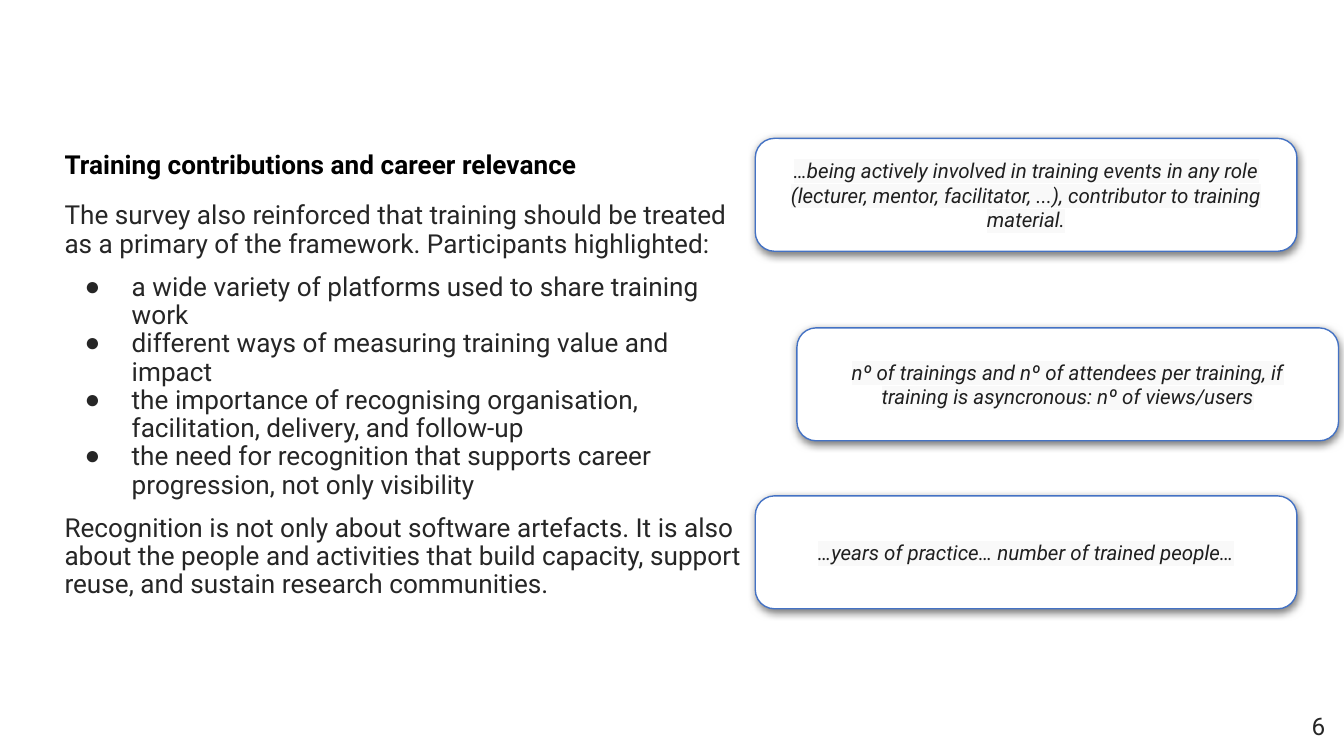
"""Build the slide on training contributions and career relevance."""
from lxml import etree
from pptx import Presentation
from pptx import util as u
from pptx.dml.color import RGBColor
from pptx.enum import shapes, text
from pptx.oxml import parse_xml
from pptx.oxml.ns import nsdecls, qn

HEADING = "Training contributions and career relevance"
INTRO = ("The survey also reinforced that training should be treated as a primary "
         "of the framework. Participants highlighted:")
POINTS = [
    "a wide variety of platforms used to share training work",
    "different ways of measuring training value and impact",
    "the importance of recognising organisation, facilitation, delivery, and follow-up",
    "the need for recognition that supports career progression, not only visibility",
]
CLOSING = ("Recognition is not only about software artefacts. It is also about the people "
           "and activities that build capacity, support reuse, and sustain research communities.")
QUOTES = [
    (5.62, 1.03, "…being actively involved in training events in any role "
                 "(lecturer, mentor, facilitator, ...), contributor to training material."),
    (5.62, 3.69, "…years of practice… number of trained people…"),
    (5.93, 2.44, "nº of trainings and nº of attendees per training, "
                 "if training is asyncronous: nº of views/users"),
]
PAGE = "6"
SLIDE_WIDTH = 10
SLIDE_HEIGHT = SLIDE_WIDTH * 9 / 16
QUOTE_SIZE = (4.03, 0.84)

THEME = {
    "font": "Roboto", "heading": "000000", "body": "262626", "quote": "1F1F1F",
    "highlight": "F9F9F9", "card": "FFFFFF", "border": "4472C4", "shadow": "000000",
    "body_size": 14, "quote_size": 11, "page_size": 13,
}


def inches(*values):
    return [u.Inches(v) for v in values]


def format_frame(tf, side, edge, anchor):
    values = {"word_wrap": True, "auto_size": text.MSO_AUTO_SIZE.NONE,
              "vertical_anchor": anchor,
              "margin_left": u.Inches(side), "margin_right": u.Inches(side),
              "margin_top": u.Inches(edge), "margin_bottom": u.Inches(edge)}
    for name, value in values.items():
        setattr(tf, name, value)


def add_text(p, words, size, color, **style):
    r = p.add_run()
    r.text = words
    r.font.color.rgb = RGBColor.from_string(THEME[color])
    values = {"name": THEME["font"], "size": u.Pt(THEME[size]), **style}
    for name, value in values.items():
        setattr(r.font, name, value)
    return r


def set_bullet(p, bulleted):
    pPr = p._p.get_or_add_pPr()
    left, indent = inches(0.5, -0.35) if bulleted else (0, 0)
    pPr.set("marL", str(left))
    pPr.set("indent", str(indent))
    if bulleted:
        color = etree.SubElement(pPr, qn("a:buClr"))
        etree.SubElement(color, qn("a:srgbClr"), val=THEME["body"])
        etree.SubElement(pPr, qn("a:buChar"), char="●")
    else:
        etree.SubElement(pPr, qn("a:buNone"))


def add_body(s):
    sp = s.placeholders[1]
    sp.left, sp.top, sp.width, sp.height = inches(0.41, 1.03, 5.21, 3.85)
    tf = sp.text_frame
    format_frame(tf, 0.07, 0.04, text.MSO_ANCHOR.TOP)
    rows = [(HEADING, "heading", False, 1.15, 0), (INTRO, "body", False, 0.9, 12)]
    rows += [(point, "body", True, 0.9, 0 if i else 8) for i, point in enumerate(POINTS)]
    rows.append((CLOSING, "body", False, 0.9, 8))
    for i, (words, color, bulleted, spacing, before) in enumerate(rows):
        p = tf.add_paragraph() if i else tf.paragraphs[0]
        set_bullet(p, bulleted)
        values = {"line_spacing": spacing, "space_before": u.Pt(before),
                  "space_after": u.Pt(0), "alignment": text.PP_ALIGN.LEFT}
        for name, value in values.items():
            setattr(p, name, value)
        add_text(p, words, "body_size", color, bold=color == "heading")


def add_quote(s, left, top, words):
    sp = s.shapes.add_shape(shapes.MSO_SHAPE.ROUNDED_RECTANGLE,
                            *inches(left, top, *QUOTE_SIZE))
    sp.adjustments[0] = 0.17
    sp.fill.solid()
    sp.fill.fore_color.rgb = RGBColor.from_string(THEME["card"])
    sp.line.color.rgb = RGBColor.from_string(THEME["border"])
    sp.line.width = u.Pt(0.75)
    sp._element.spPr.append(parse_xml(
        f'<a:effectLst {nsdecls("a")}><a:outerShdw blurRad="{u.Pt(4.5)}" dist="{u.Pt(1.5)}" '
        f'dir="5400000" algn="bl" rotWithShape="0"><a:srgbClr val="{THEME["shadow"]}">'
        '<a:alpha val="50000"/></a:srgbClr></a:outerShdw></a:effectLst>'))
    tf = sp.text_frame
    format_frame(tf, 0.1, 0.1, text.MSO_ANCHOR.MIDDLE)
    p = tf.paragraphs[0]
    p.alignment = text.PP_ALIGN.CENTER
    r = add_text(p, words, "quote_size", "quote", italic=True)
    highlight = parse_xml(f'<a:highlight {nsdecls("a")}>'
                          f'<a:srgbClr val="{THEME["highlight"]}"/></a:highlight>')
    r._r.rPr.find(qn("a:solidFill")).addnext(highlight)


def add_page_number(s):
    tf = s.shapes.add_textbox(*inches(9.36, 5.19, 0.6, 0.43)).text_frame
    format_frame(tf, 0.1, 0.1, text.MSO_ANCHOR.TOP)
    p = tf.paragraphs[0]
    p.alignment = text.PP_ALIGN.RIGHT
    add_text(p, PAGE, "page_size", "body")


def main():
    prs = Presentation()
    prs.slide_width, prs.slide_height = inches(SLIDE_WIDTH, SLIDE_HEIGHT)
    s = prs.slides.add_slide(prs.slide_layouts[1])
    title = s.shapes.title._element
    title.getparent().remove(title)
    add_body(s)
    add_page_number(s)
    for quote in QUOTES:
        add_quote(s, *quote)
    prs.save("out.pptx")


if __name__ == "__main__":
    main()
